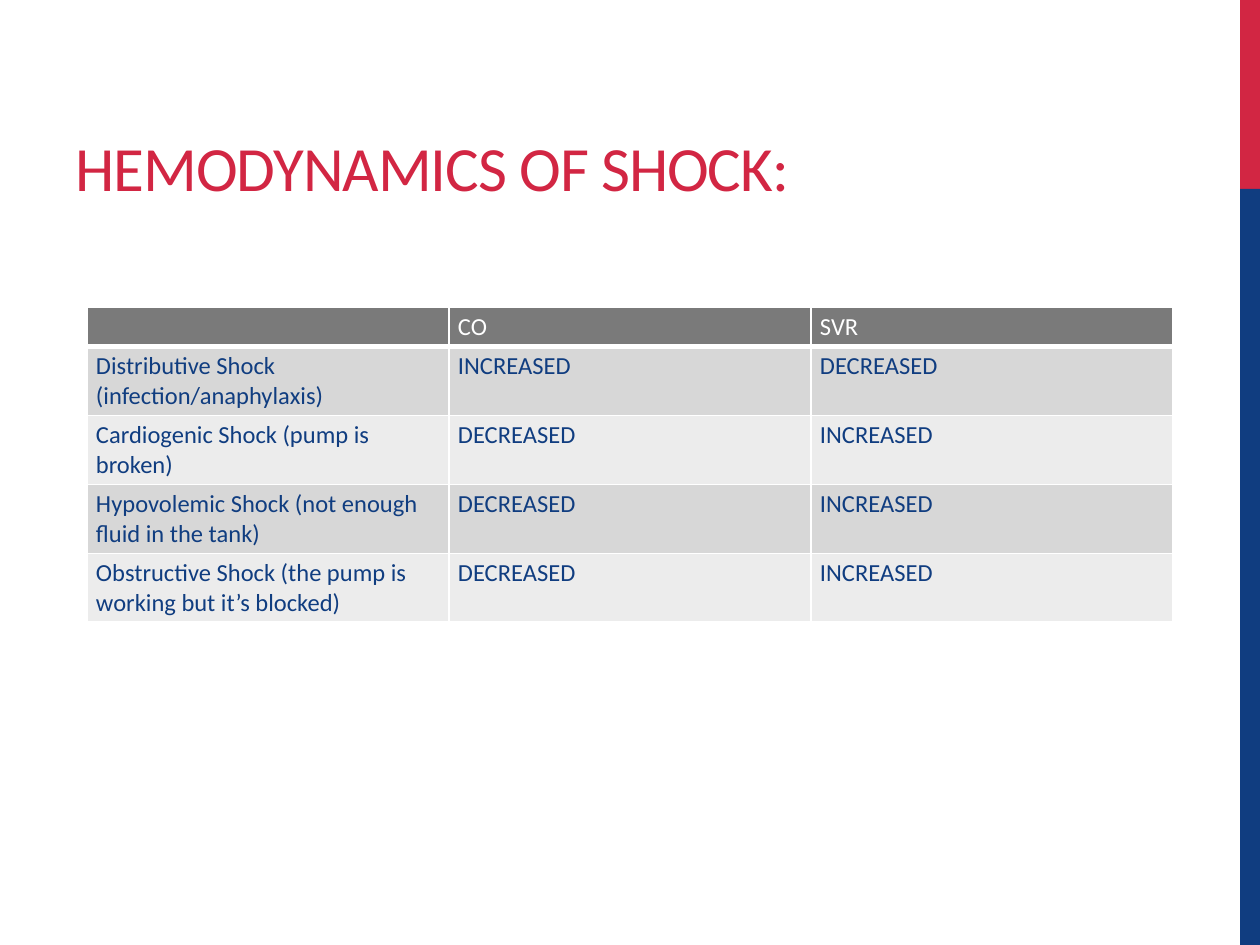
from lxml import etree
from pptx import Presentation, util as u
from pptx.dml.color import RGBColor
from pptx.enum import shapes, text
from pptx.oxml.ns import qn

RED = RGBColor(0xD2, 0x26, 0x43)
BLUE = RGBColor(0x10, 0x3D, 0x80)
WHITE = RGBColor(0xFF, 0xFF, 0xFF)
HEADER_GRAY = RGBColor(0x7A, 0x7A, 0x7A)
BANDS = RGBColor(0xD7, 0xD7, 0xD7), RGBColor(0xEC, 0xEC, 0xEC)

WIDTH, HEIGHT = 1260, 945
STRIPE_LEFT, STRIPE_SPLIT = 1240, 189
HEADER_HEIGHT, ROW_HEIGHT = 38, 69

SHOCK_ROWS = [
    ("", "CO", "SVR"),
    ("Distributive Shock (infection/anaphylaxis)", "INCREASED", "DECREASED"),
    ("Cardiogenic Shock (pump is broken)", "DECREASED", "INCREASED"),
    ("Hypovolemic Shock (not enough fluid in the tank)", "DECREASED", "INCREASED"),
    ("Obstructive Shock (the pump is working but it’s blocked)", "DECREASED", "INCREASED"),
]


def px(length):
    """Turn px at 126 to the inch into EMU."""
    return u.Emu(round(length * 914400 / 126))


class SlideBuilder:
    font = "Calibri"
    title_size = 36
    cell_size = 14

    def __init__(self, slide):
        self.slide = slide

    def bar(self, left, top, width, height, color):
        bar = self.slide.shapes.add_shape(
            shapes.MSO_SHAPE.RECTANGLE, *map(px, (left, top, width, height)))
        bar.shadow.inherit = False
        bar.fill.solid()
        bar.fill.fore_color.rgb = color
        bar.line.fill.background()

    def run(self, paragraph, words, size, color):
        run = paragraph.add_run()
        run.text = words
        run.font.name = self.font
        run.font.size = u.Pt(size)
        run.font.color.rgb = color
        return run

    def title(self, left, top, width, height, words):
        frame = self.slide.shapes.add_textbox(
            *map(px, (left, top, width, height))).text_frame
        frame.word_wrap = True
        frame.vertical_anchor = text.MSO_ANCHOR.BOTTOM
        heading = self.run(frame.paragraphs[0], words, self.title_size, RED)
        heading.font._element.set("spc", "-60")

    def borders(self, cell, bottom):
        """Draw white cell edges, 1 pt but for the bottom one."""
        properties = cell._tc.get_or_add_tcPr()
        for side, points in (("L", 1), ("R", 1), ("T", 1), ("B", bottom)):
            line = etree.SubElement(properties, qn(f"a:ln{side}"), w=str(u.Pt(points)))
            fill = etree.SubElement(line, qn("a:solidFill"))
            etree.SubElement(fill, qn("a:srgbClr"), val=str(WHITE))

    def cell(self, cell, words, fill, color, bottom):
        cell.margin_left = cell.margin_right = px(9)
        cell.margin_top = cell.margin_bottom = px(5)
        self.borders(cell, bottom)
        cell.fill.solid()
        cell.fill.fore_color.rgb = fill
        paragraph = cell.text_frame.paragraphs[0]
        if words:
            self.run(paragraph, words, self.cell_size, color)
        else:
            # An empty cell takes its line height from the paragraph end.
            etree.SubElement(paragraph._p, qn("a:endParaRPr"), sz=str(self.cell_size * 100))

    def table(self, left, top, column_width, rows):
        columns = len(rows[0])
        height = HEADER_HEIGHT + ROW_HEIGHT * (len(rows) - 1)
        table = self.slide.shapes.add_table(
            len(rows), columns,
            *map(px, (left, top, column_width * columns, height))).table
        for column in table.columns:
            column.width = px(column_width)
        for r, row in enumerate(rows):
            table.rows[r].height = px(ROW_HEIGHT if r else HEADER_HEIGHT)
            look = (BANDS[(r - 1) % 2], BLUE, 1) if r else (HEADER_GRAY, WHITE, 3)
            for c, words in enumerate(row):
                self.cell(table.cell(r, c), words, *look)


def main():
    deck = Presentation()
    deck.slide_width, deck.slide_height = px(WIDTH), px(HEIGHT)
    builder = SlideBuilder(deck.slides.add_slide(deck.slide_layouts[6]))
    stripe_width = WIDTH - STRIPE_LEFT
    builder.bar(STRIPE_LEFT, 0, stripe_width, STRIPE_SPLIT, RED)
    builder.bar(STRIPE_LEFT, STRIPE_SPLIT, stripe_width, HEIGHT - STRIPE_SPLIT, BLUE)
    builder.title(63, 21, 798, 189, "HEMODYNAMICS OF SHOCK:")
    builder.table(87, 307, 362, SHOCK_ROWS)
    deck.save("out.pptx")


if __name__ == "__main__":
    main()
